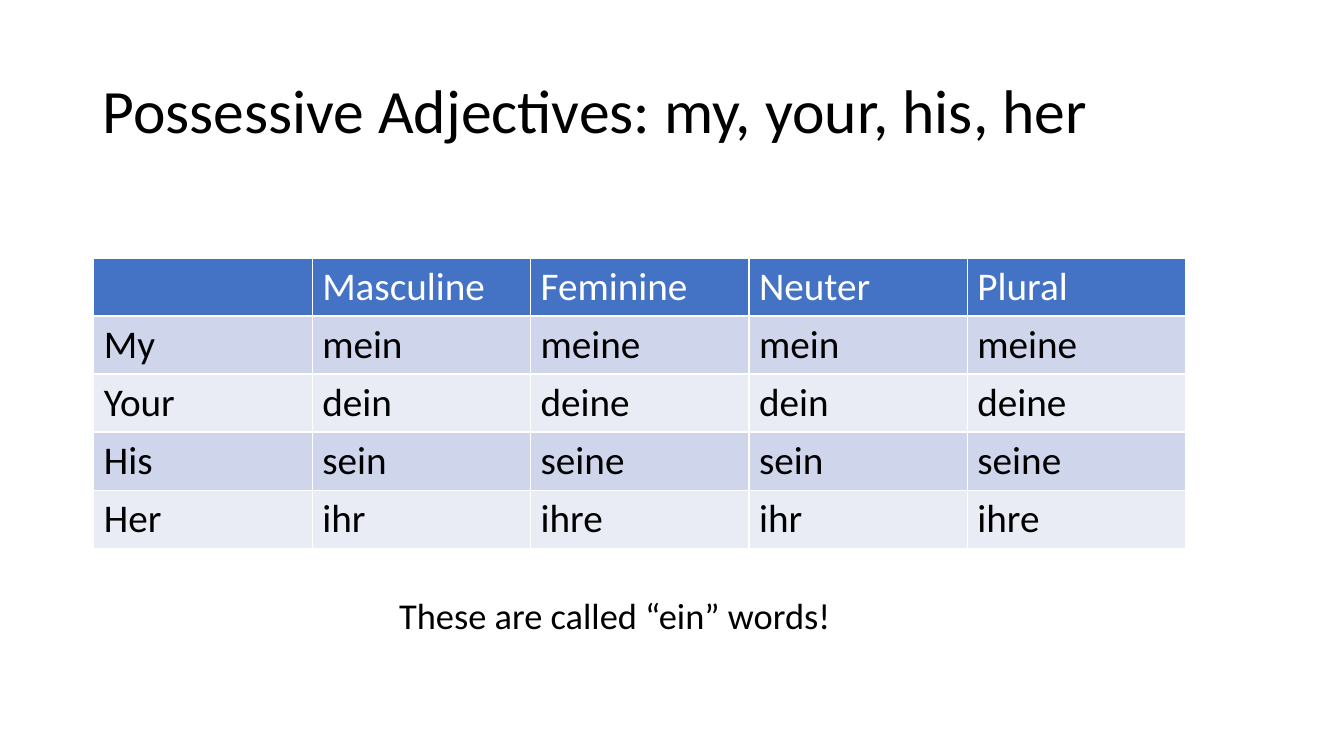
from pptx import Presentation
from pptx.dml.color import RGBColor
from pptx.enum.text import MSO_ANCHOR, MSO_AUTO_SIZE, PP_ALIGN
from pptx.util import Pt

COLORS = {
    "text": "000000",
    "header_text": "FFFFFF",
    "header": "4472C4",
    "odd_row": "CFD5EA",
    "even_row": "E9EBF5",
}
FONT = "Calibri"
COLUMN_WIDTH, ROW_HEIGHT = 156, 41.4

ADJECTIVES = [
    ["", "Masculine", "Feminine", "Neuter", "Plural"],
    ["My", "mein", "meine", "mein", "meine"],
    ["Your", "dein", "deine", "dein", "deine"],
    ["His", "sein", "seine", "sein", "seine"],
    ["Her", "ihr", "ihre", "ihr", "ihre"],
]


def set_all(target, values):
    for name, value in values.items():
        setattr(target, name, value)


def write(frame, text, size, color="text"):
    """Fill the first paragraph of a frame with one formatted span."""
    para = frame.paragraphs[0]
    para.alignment = PP_ALIGN.LEFT
    span = para.add_run()
    span.text = text
    set_all(span.font, {"name": FONT, "size": Pt(size), "bold": False})
    span.font.color.rgb = RGBColor.from_string(COLORS[color])
    return para


def add_title(page, text):
    title = page.shapes.title
    set_all(title, {"left": Pt(66), "top": Pt(28.75),
                    "width": Pt(828), "height": Pt(104.4)})
    set_all(title.text_frame, {"vertical_anchor": MSO_ANCHOR.MIDDLE,
                               "auto_size": MSO_AUTO_SIZE.NONE})
    write(title.text_frame, text, 44).line_spacing = 0.9


def add_grid(page, rows, left, top):
    # The default table style supplies the white rules between cells
    frame = page.shapes.add_table(
        len(rows), len(rows[0]), Pt(left), Pt(top),
        Pt(COLUMN_WIDTH * len(rows[0])), Pt(ROW_HEIGHT * len(rows)))
    table = frame.table
    for row_index, row in enumerate(rows):
        if row_index == 0:
            fill, color = "header", "header_text"
        else:
            fill, color = "odd_row" if row_index % 2 else "even_row", "text"
        for column_index, text in enumerate(row):
            cell = table.cell(row_index, column_index)
            cell.fill.solid()
            cell.fill.fore_color.rgb = RGBColor.from_string(COLORS[fill])
            if text:
                write(cell.text_frame, text, 28, color)


def add_caption(page, text, left, top, width, height):
    box = page.shapes.add_textbox(Pt(left), Pt(top), Pt(width), Pt(height))
    set_all(box.text_frame, {"word_wrap": False,
                             "auto_size": MSO_AUTO_SIZE.SHAPE_TO_FIT_TEXT})
    write(box.text_frame, text, 26)


def main():
    deck = Presentation()
    set_all(deck, {"slide_width": Pt(960), "slide_height": Pt(540)})
    page = deck.slides.add_slide(deck.slide_layouts[5])

    add_title(page, "Possessive Adjectives: my, your, his, her")
    add_grid(page, ADJECTIVES, 67, 184.3)
    add_caption(page, "These are called “ein” words!", 278, 420, 386, 39)

    deck.save("out.pptx")


if __name__ == "__main__":
    main()
